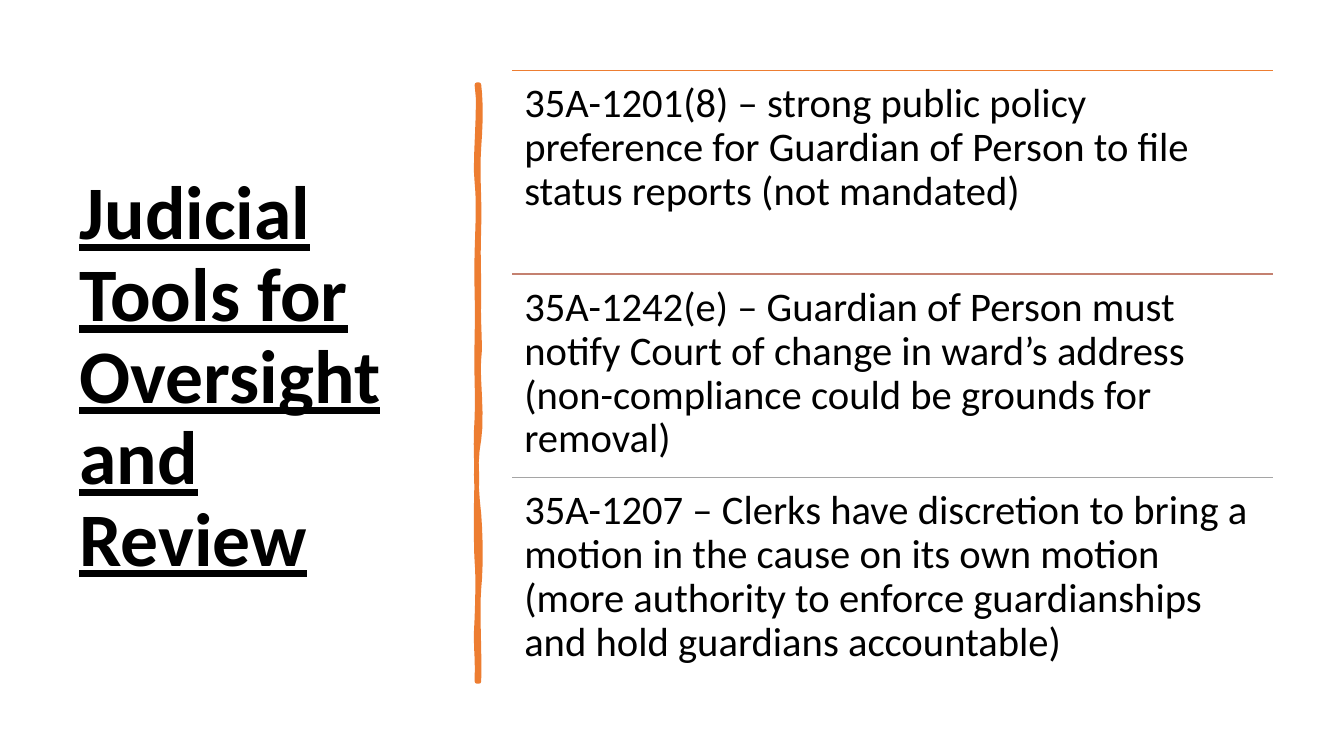
import dataclasses

import lxml.etree
import pptx
import pptx.dml.color
import pptx.enum.shapes
import pptx.enum.text
import pptx.oxml.ns
import pptx.slide
import pptx.util

Inches = pptx.util.Inches
Pt = pptx.util.Pt
RGBColor = pptx.dml.color.RGBColor
ANCHOR = pptx.enum.text.MSO_ANCHOR

BLACK = RGBColor(0x00, 0x00, 0x00)
ORANGE = RGBColor(0xED, 0x7D, 0x31)
RUST = RGBColor(0xC4, 0x81, 0x70)
GRAY = RGBColor(0xA5, 0xA5, 0xA5)

LEFT, TOP, WIDTH, HEIGHT = 5.08, 0.7, 7.55, 2.02
STEPS = 6
START = (4.75, 0.84)
CURVES = [
    ((4.77, 1.02), (4.77, 1.19), (4.75, 1.46)),
    ((4.73, 1.73), (4.76, 1.95), (4.75, 2.26)),
    ((4.74, 2.57), (4.75, 2.62), (4.75, 2.94)),
    ((4.74, 3.25), (4.77, 3.42), (4.75, 3.56)),
    ((4.73, 3.7), (4.79, 4.14), (4.75, 4.36)),
    ((4.71, 4.57), (4.72, 4.84), (4.75, 5.1)),
    ((4.77, 5.36), (4.77, 5.64), (4.75, 5.84)),
    ((4.73, 6.03), (4.76, 6.5), (4.75, 6.76)),
    ((4.74, 6.76), (4.73, 6.76), (4.73, 6.76)),
    ((4.74, 6.46), (4.71, 6.44), (4.73, 6.13)),
    ((4.74, 5.83), (4.74, 5.7), (4.73, 5.57)),
    ((4.72, 5.44), (4.72, 4.95), (4.73, 4.77)),
    ((4.73, 4.59), (4.71, 4.45), (4.73, 4.15)),
    ((4.74, 3.86), (4.72, 3.73), (4.73, 3.35)),
    ((4.74, 2.98), (4.72, 2.81), (4.73, 2.5)),
    ((4.74, 2.18), (4.75, 2.0), (4.73, 1.81)),
    ((4.7, 1.63), (4.77, 1.04), (4.73, 0.84)),
]


@dataclasses.dataclass
class Rule:
    text: str
    color: RGBColor


RULES = [
    Rule("35A-1201(8) – strong public policy preference for Guardian of Person "
         "to file status reports (not mandated)", ORANGE),
    Rule("35A-1242(e) – Guardian of Person must notify Court of change in ward’s "
         "address (non-compliance could be grounds for removal)", RUST),
    Rule("35A-1207 – Clerks have discretion to bring a motion in the cause on its "
         "own motion (more authority to enforce guardianships and hold guardians "
         "accountable)", GRAY),
]


def add_text(slide: pptx.slide.Slide, text: str, box: tuple[float, ...], size: int,
             inset: tuple[float, float], anchor: ANCHOR, strong: bool = False) -> None:
    frame = slide.shapes.add_textbox(*map(Inches, box)).text_frame
    frame.word_wrap = True
    frame.vertical_anchor = anchor
    frame.margin_left = frame.margin_right = Inches(inset[0])
    frame.margin_top = frame.margin_bottom = Inches(inset[1])
    line = frame.paragraphs[0]
    line.text = text
    line.line_spacing = 0.9
    line.font.name = "Calibri"
    line.font.size = Pt(size)
    line.font.color.rgb = BLACK
    line.font.bold = strong
    line.font.underline = strong


def add_rule(slide: pptx.slide.Slide, rule: Rule, top: float) -> None:
    line = slide.shapes.add_connector(
        pptx.enum.shapes.MSO_CONNECTOR.STRAIGHT,
        Inches(LEFT), Inches(top), Inches(LEFT + WIDTH), Inches(top))
    line.line.color.rgb = rule.color
    line.line.width = Pt(1)
    lxml.etree.SubElement(line.element.spPr, pptx.oxml.ns.qn("a:effectLst"))
    add_text(slide, rule.text, (LEFT, top, WIDTH, HEIGHT), 29, (0.12, 0.12), ANCHOR.TOP)


def trace() -> list[tuple[int, int]]:
    points = []
    start = START
    for first, second, end in CURVES:
        for step in range(1, STEPS + 1):
            t = step / STEPS
            u = 1 - t
            x, y = (u**3 * a + 3 * u * u * t * b + 3 * u * t * t * c + t**3 * d
                    for a, b, c, d in zip(start, first, second, end))
            points.append((Inches(x), Inches(y)))
        start = end
    return points


def add_bar(slide: pptx.slide.Slide) -> None:
    pen = slide.shapes.build_freeform(Inches(START[0]), Inches(START[1]))
    pen.add_line_segments(trace(), close=True)
    bar = pen.convert_to_shape()
    bar.shadow.inherit = False
    bar.fill.solid()
    bar.fill.fore_color.rgb = ORANGE
    bar.line.color.rgb = ORANGE
    bar.line.width = Pt(3.25)
    edge = bar.line.fill
    edge.solid()
    edge.fore_color.rgb = ORANGE
    stroke = bar.element.spPr.find(pptx.oxml.ns.qn("a:ln"))
    lxml.etree.SubElement(stroke, pptx.oxml.ns.qn("a:round"))


def main() -> None:
    deck = pptx.Presentation()
    deck.slide_width = Inches(13.33)
    deck.slide_height = Inches(7.5)
    slide = deck.slides.add_slide(deck.slide_layouts[6])
    add_text(slide, "Judicial Tools for Oversight and Review", (0.69, 0.7, 3.74, 6.11),
             54, (0.1, 0.05), ANCHOR.MIDDLE, strong=True)
    add_bar(slide)
    for row, rule in enumerate(RULES):
        add_rule(slide, rule, TOP + row * HEIGHT)
    deck.save("out.pptx")


if __name__ == "__main__":
    main()
